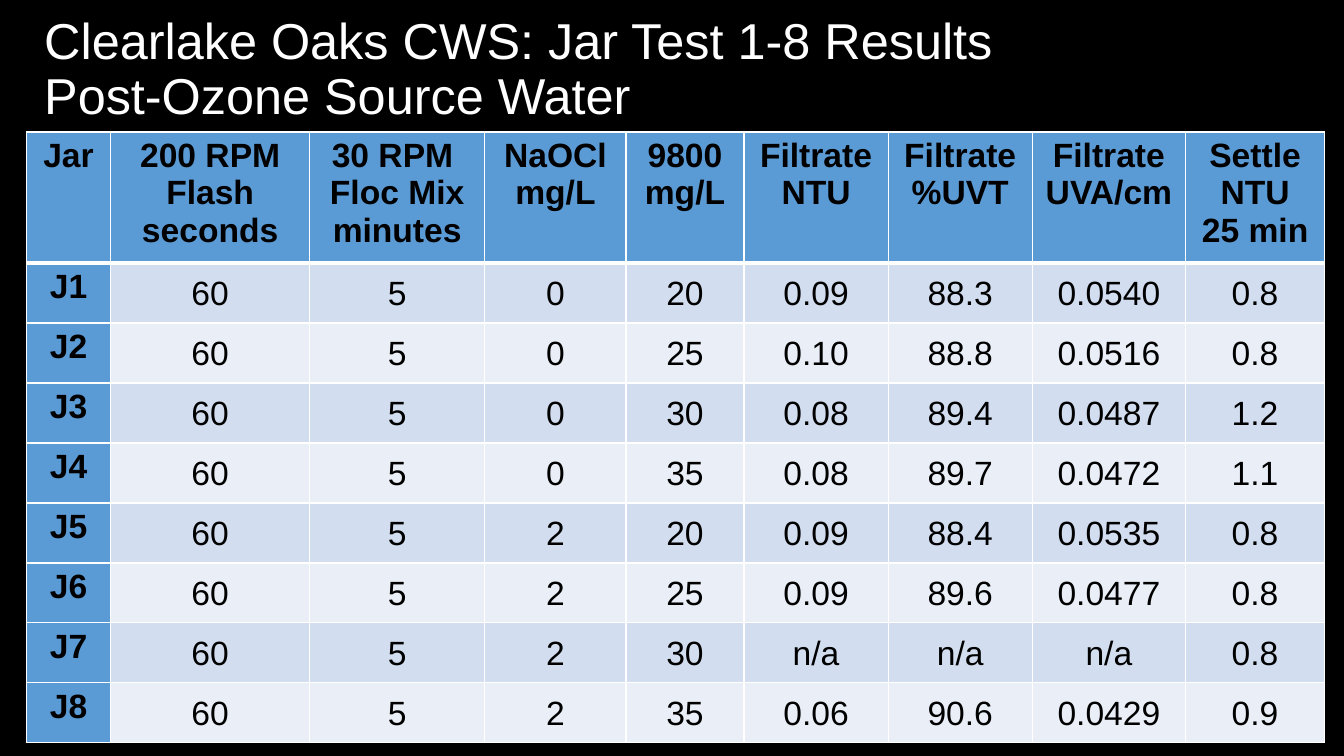
import pptx
import pptx.util
import pptx.dml.color
import pptx.enum.text
import pptx.oxml
import pptx.oxml.ns
from pptx.util import Inches

FONT = "Arial"
BLACK, WHITE = "000000", "FFFFFF"
HEADER_BLUE = "5B9BD5"
BANDS = ["D2DEEF", "EAEFF7"]

TITLE_LINES = ["Clearlake Oaks CWS: Jar Test 1-8 Results", "Post-Ozone Source Water"]
COLUMN_WIDTHS = [0.84, 1.97, 1.74, 1.4, 1.17, 1.43, 1.43, 1.52, 1.38]
HEADER_HEIGHT, JAR_HEIGHT = 1.26, 0.595
HEADERS = [
    ["Jar"],
    ["200 RPM", "Flash", "seconds"],
    ["30 RPM ", "Floc Mix", "minutes"],
    ["NaOCl", "mg/L"],
    ["9800", "mg/L"],
    ["Filtrate", "NTU"],
    ["Filtrate", "%UVT"],
    ["Filtrate", "UVA/cm"],
    ["Settle", "NTU", "25 min"],
]
JARS = [
    ["J1", "60", "5", "0", "20", "0.09", "88.3", "0.0540", "0.8"],
    ["J2", "60", "5", "0", "25", "0.10", "88.8", "0.0516", "0.8"],
    ["J3", "60", "5", "0", "30", "0.08", "89.4", "0.0487", "1.2"],
    ["J4", "60", "5", "0", "35", "0.08", "89.7", "0.0472", "1.1"],
    ["J5", "60", "5", "2", "20", "0.09", "88.4", "0.0535", "0.8"],
    ["J6", "60", "5", "2", "25", "0.09", "89.6", "0.0477", "0.8"],
    ["J7", "60", "5", "2", "30", "n/a", "n/a", "n/a", "0.8"],
    ["J8", "60", "5", "2", "35", "0.06", "90.6", "0.0429", "0.9"],
]


def rgb(color):
    return pptx.dml.color.RGBColor.from_string(color)


def paint(fill, color):
    fill.solid()
    fill.fore_color.rgb = rgb(color)


def add_run(para, text, size, color, bold=False):
    span = para.add_run()
    span.text = text
    span.font.name = FONT
    span.font.size = pptx.util.Pt(size)
    span.font.bold = bold
    span.font.color.rgb = rgb(color)


def add_title(page, lines):
    box = page.shapes.add_textbox(Inches(0.34), Inches(0.09), Inches(12.7), Inches(1.22))
    frame = box.text_frame
    frame.word_wrap = True
    frame.vertical_anchor = pptx.enum.text.MSO_ANCHOR.MIDDLE
    para = frame.paragraphs[0]
    para.line_spacing = 0.9
    for index, line in enumerate(lines):
        if index:
            para.add_line_break()
        add_run(para, line, 36, WHITE)


def add_borders(cell, top, bottom):
    """Draw white cell edges; call before filling, as the schema puts lines first."""
    properties = cell._tc.get_or_add_tcPr()
    for side, points in (("L", 1), ("R", 1), ("T", top), ("B", bottom)):
        properties.append(pptx.oxml.parse_xml(
            f'<a:ln{side} {pptx.oxml.ns.nsdecls("a")} w="{pptx.util.Pt(points)}">'
            f'<a:solidFill><a:srgbClr val="{WHITE}"/></a:solidFill></a:ln{side}>'
        ))


def set_margins(cell, left, top, right, bottom):
    cell.margin_left, cell.margin_top = Inches(left), Inches(top)
    cell.margin_right, cell.margin_bottom = Inches(right), Inches(bottom)


def fill_cell(cell, lines, color, heading, top=1, bottom=1):
    add_borders(cell, top, bottom)
    paint(cell.fill, color)
    if heading:
        set_margins(cell, 0.1, 0.05, 0.1, 0.05)
        cell.vertical_anchor = pptx.enum.text.MSO_ANCHOR.TOP
    else:
        set_margins(cell, 0.01, 0.01, 0.01, 0)
        cell.vertical_anchor = pptx.enum.text.MSO_ANCHOR.MIDDLE
    frame = cell.text_frame
    for index, line in enumerate(lines):
        para = frame.add_paragraph() if index else frame.paragraphs[0]
        para.alignment = pptx.enum.text.PP_ALIGN.CENTER
        add_run(para, line, 24, BLACK, bold=heading)


def add_results_table(page):
    heights = [HEADER_HEIGHT] + [JAR_HEIGHT] * len(JARS)
    table = page.shapes.add_table(
        len(heights), len(COLUMN_WIDTHS), Inches(0.26), Inches(1.31),
        Inches(sum(COLUMN_WIDTHS)), Inches(sum(heights)),
    ).table
    for column, width in zip(table.columns, COLUMN_WIDTHS):
        column.width = Inches(width)
    for row, height in zip(table.rows, heights):
        row.height = Inches(height)
    for column, lines in enumerate(HEADERS):
        fill_cell(table.cell(0, column), lines, HEADER_BLUE, heading=True, bottom=3)
    for row, jar in enumerate(JARS, start=1):
        for column, value in enumerate(jar):
            heading = column == 0
            color = HEADER_BLUE if heading else BANDS[(row - 1) % 2]
            fill_cell(table.cell(row, column), [value], color, heading, top=3 if row == 1 else 1)


def main():
    deck = pptx.Presentation()
    deck.slide_width, deck.slide_height = Inches(13.33), Inches(7.5)
    page = deck.slides.add_slide(deck.slide_layouts[6])
    paint(page.background.fill, BLACK)
    add_title(page, TITLE_LINES)
    add_results_table(page)
    deck.save("out.pptx")


if __name__ == "__main__":
    main()
